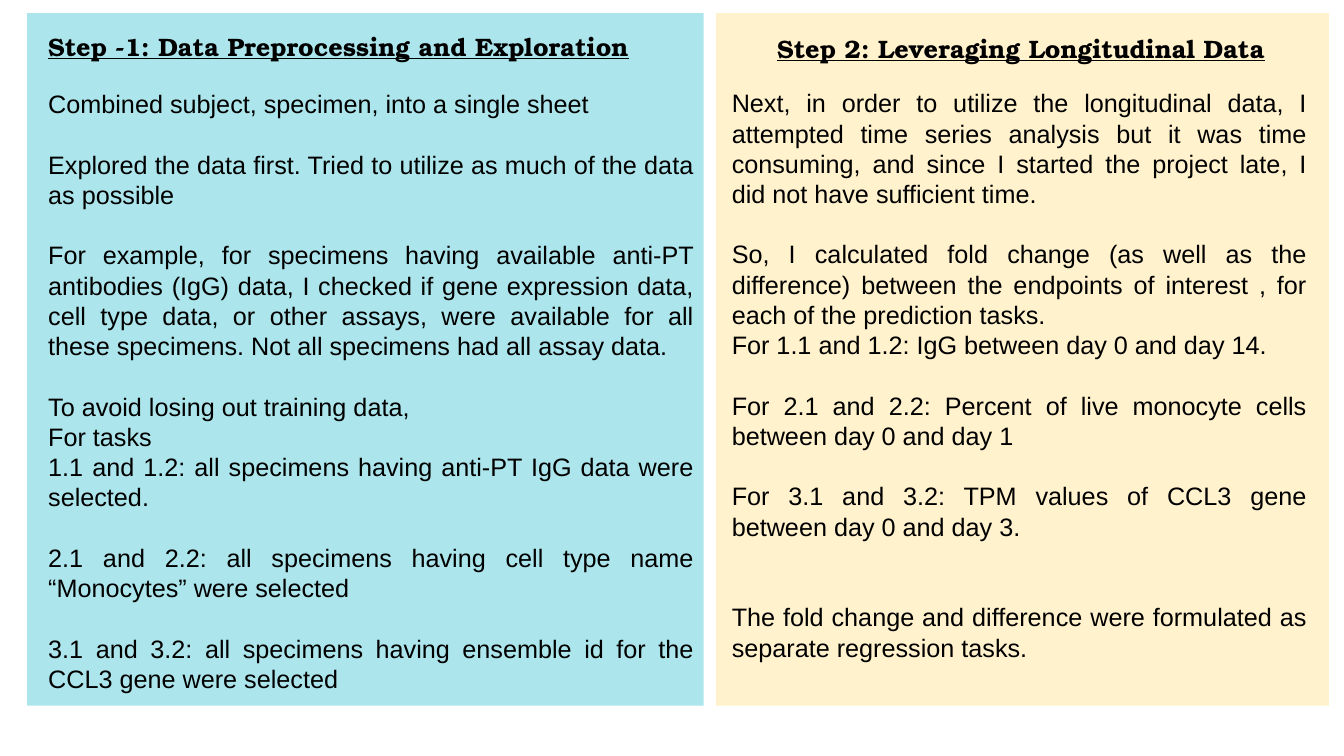
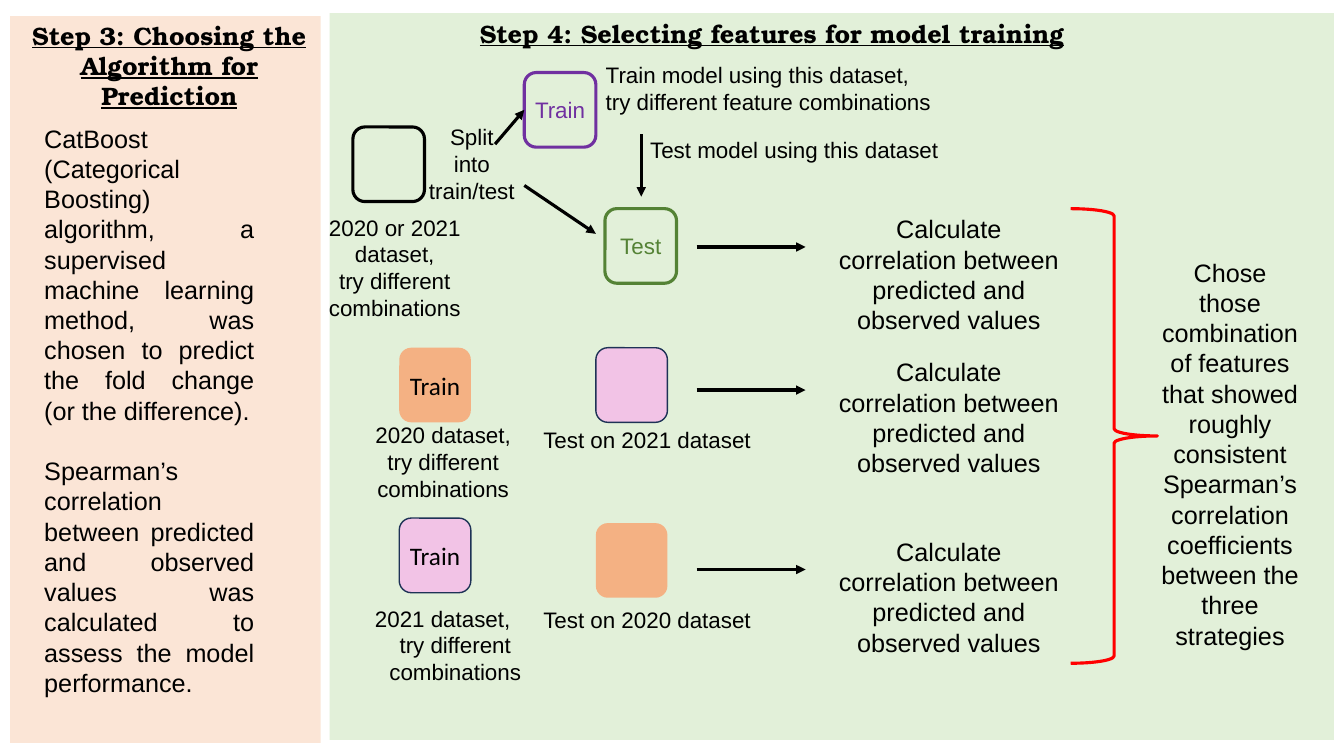
"""Builds two slides on the steps of an immune response prediction project."""
from lxml import etree
from pptx import Presentation
from pptx.dml.color import RGBColor
from pptx.enum.shapes import MSO_CONNECTOR, MSO_SHAPE
from pptx.enum.text import MSO_ANCHOR, MSO_AUTO_SIZE, PP_ALIGN
from pptx.oxml.ns import qn
from pptx.util import Inches, Pt

LEFT, CENTER, JUSTIFY = PP_ALIGN.LEFT, PP_ALIGN.CENTER, PP_ALIGN.JUSTIFY
MIDDLE = MSO_ANCHOR.MIDDLE
GROW = MSO_AUTO_SIZE.SHAPE_TO_FIT_TEXT
RECT, ROUNDED = MSO_SHAPE.RECTANGLE, MSO_SHAPE.ROUNDED_RECTANGLE
BRACE = MSO_SHAPE.RIGHT_BRACE
STRAIGHT = MSO_CONNECTOR.STRAIGHT

COLORS = {
    "text": "000000", "train": "7030A0", "test": "548235", "brace": "FF0000",
    "blue": "ACE6EC", "yellow": "FFF2CC", "peach": "FBE5D6", "green": "E2F0D9",
    "data_2020": "F4B183", "data_2021": "F2C3E6", "outline": "1E3256",
}
BODY_FONT, TITLE_FONT, LABEL_FONT = "Arial", "TeX Gyre Bonum", "Calibri"
BODY_SIZE, NOTE_SIZE = 18, 16
LINE_WIDTH = 2.25
BLANK_LINE = 21.6
BOX_WIDTH, BOX_HEIGHT = 0.71, 0.74

PREPROCESSING = [
    "Combined subject, specimen, into a single sheet",
    "Explored the data first. Tried to utilize as much of the data as possible",
    "For example, for specimens having available anti-PT antibodies (IgG) data, "
    "I checked if gene expression data, cell type data, or other assays, were "
    "available for all these specimens. Not all specimens had all assay data.",
    "To avoid losing out training data,",
    "For tasks",
    "1.1 and 1.2: all specimens having anti-PT IgG data were selected.",
    "2.1 and 2.2: all specimens having cell type name “Monocytes” were selected",
    "3.1 and 3.2: all specimens having ensemble id for the CCL3 gene were selected",
]
LONGITUDINAL = [
    "Next, in order to utilize the longitudinal data, I attempted time series "
    "analysis but it was time consuming, and since I started the project late, "
    "I did not have sufficient time.",
    "So, I calculated fold change (as well as the difference) between the "
    "endpoints of interest , for each of the prediction tasks.",
    "For 1.1 and 1.2: IgG between day 0 and day 14.",
    "For 2.1 and 2.2: Percent of live monocyte cells between day 0 and day 1",
    "For 3.1 and 3.2: TPM values of CCL3 gene between day 0 and day 3.",
    "The fold change and difference were formulated as separate regression tasks.",
]
ALGORITHM = [
    "CatBoost (Categorical Boosting) algorithm, a supervised machine learning "
    "method, was chosen to predict the fold change (or the difference).",
    "Spearman’s correlation between predicted and observed values was "
    "calculated to assess the model performance.",
]
CHOICE = [
    "Chose those", "combination of features", "that showed", "roughly consistent",
    "Spearman’s correlation coefficients between the three strategies",
]
CORRELATION = "Calculate correlation between predicted and observed values"
COMBINATIONS = "try different combinations"


def rgb(name):
    """Return the named palette colour."""
    return RGBColor.from_string(COLORS[name])


def write(frame, paragraphs, size=BODY_SIZE, font=BODY_FONT, color="text",
          align=LEFT, title=False, gaps=()):
    """Fill a frame with paragraphs; gaps maps an index to blank lines above it."""
    gaps = dict(gaps)
    for index, text in enumerate(paragraphs):
        paragraph = frame.add_paragraph() if index else frame.paragraphs[0]
        paragraph.alignment = align
        if index in gaps:
            paragraph.space_before = Pt(BLANK_LINE * gaps[index])
        run = paragraph.add_run()
        run.text = text
        run.font.size = Pt(size)
        run.font.name = TITLE_FONT if title else font
        run.font.color.rgb = rgb(color)
        if title:
            run.font.bold = run.font.underline = True


def add_text(slide, at, *paragraphs, wrap=True, **style):
    """Add a text box that grows with its text."""
    frame = slide.shapes.add_textbox(*map(Inches, at)).text_frame
    frame.word_wrap = wrap
    frame.auto_size = GROW
    write(frame, paragraphs, **style)
    return frame


def add_figure(slide, kind, at, fill=None, line=None, width=LINE_WIDTH):
    """Add a preset shape with an optional fill and outline."""
    figure = slide.shapes.add_shape(kind, *map(Inches, at))
    figure.shadow.inherit = False
    if fill:
        figure.fill.solid()
        figure.fill.fore_color.rgb = rgb(fill)
    else:
        figure.fill.background()
    if line:
        figure.line.color.rgb = rgb(line)
        figure.line.width = Pt(width)
    else:
        figure.line.fill.background()
    return figure


def add_dataset(slide, left, top, label=None, style=None, **look):
    """Add a rounded dataset box with an optional centred label."""
    box = add_figure(slide, ROUNDED, (left, top, BOX_WIDTH, BOX_HEIGHT), **look)
    if label:
        frame = box.text_frame
        frame.margin_left = frame.margin_right = 0
        frame.vertical_anchor = MIDDLE
        frame.word_wrap = False
        write(frame, [label], align=CENTER, **(style or {}))
    return box


def add_arrow(slide, start, end):
    """Add a straight black arrow."""
    arrow = slide.shapes.add_connector(STRAIGHT, *map(Inches, (*start, *end)))
    arrow.line.color.rgb = rgb("text")
    arrow.line.width = Pt(LINE_WIDTH)
    etree.SubElement(arrow.line._get_or_add_ln(), qn("a:tailEnd"), type="triangle")
    etree.SubElement(arrow._element.spPr, qn("a:effectLst"))
    return arrow


def build_data_slide(slide):
    """Draw steps 1 and 2."""
    add_figure(slide, RECT, (7.1, 0.13, 6.08, 6.87), fill="yellow")
    add_figure(slide, RECT, (0.27, 0.13, 6.71, 6.87), fill="blue")
    add_text(slide, (0.38, 0.83, 6.6, 6.16), *PREPROCESSING, align=JUSTIFY,
             gaps={1: 1, 2: 1, 3: 1, 6: 1, 7: 1})
    add_text(slide, (7.16, 0.82, 5.9, 5.86), *LONGITUDINAL, align=JUSTIFY,
             gaps={1: 1, 3: 1, 4: 1, 5: 2})
    add_text(slide, (0.38, 0.26, 6.02, 0.4),
             "Step -1: Data Preprocessing and Exploration", wrap=False, title=True)
    add_text(slide, (7.61, 0.28, 5.09, 0.4),
             "Step 2: Leveraging Longitudinal Data", wrap=False, title=True)


def draw_split_strategy(slide):
    """Draw the strategy that splits one dataset into train and test parts."""
    add_dataset(slide, 3.5, 1.26, line="text")
    train = add_dataset(slide, 5.2, 0.72, "Train", line="train",
                        style={"size": NOTE_SIZE, "color": "train"})
    add_dataset(slide, 6, 2.07, "Test", line="test",
                style={"size": NOTE_SIZE, "color": "test"})
    add_arrow(slide, (4.91, 1.43), (5.2, 1.09)).end_connect(train, 1)
    add_arrow(slide, (5.2, 1.84), (5.91, 2.32))
    add_arrow(slide, (6.36, 1.33), (6.36, 1.95))
    add_text(slide, (5.91, 0.56, 3.47, 0.64), "Train model using this dataset,",
             "try different feature combinations", wrap=False, size=NOTE_SIZE)
    add_text(slide, (6.35, 1.3, 3.09, 0.37), "Test model using this dataset",
             size=NOTE_SIZE)
    add_text(slide, (3.02, 2.07, 1.79, 1.18), "2020 or 2021 dataset,", COMBINATIONS,
             size=NOTE_SIZE, align=CENTER)
    add_text(slide, (4.06, 1.17, 1.24, 0.91), "Split", "into train/test",
             size=NOTE_SIZE, align=CENTER)


def draw_cross_strategies(slide):
    """Draw the strategies that train on one year and test on the other."""
    looks = {
        2020: {"fill": "data_2020"},
        2021: {"fill": "data_2021", "line": "outline", "width": 1},
    }
    rows = [
        (2020, 2021, 3.45, 3.45, (3.5, 4.13), 4.18, CENTER),
        (2021, 2020, 5.14, 5.19, (3.62, 5.95), 5.96, LEFT),
    ]
    for train, test, train_top, test_top, note_at, test_note_top, align in rows:
        add_dataset(slide, 3.96, train_top, "Train", style={"font": LABEL_FONT},
                    **looks[train])
        add_dataset(slide, 5.91, test_top, **looks[test])
        note = add_text(slide, (*note_at, 1.79, 0.91), f"{train} dataset,",
                        COMBINATIONS, size=NOTE_SIZE, align=CENTER)
        note.paragraphs[0].alignment = align
        add_text(slide, (5.29, test_note_top, 2.29, 0.37), f"Test on {test} dataset",
                 wrap=False, size=NOTE_SIZE)


def build_model_slide(slide):
    """Draw steps 3 and 4."""
    add_figure(slide, RECT, (3.27, 0.13, 9.96, 7.21), fill="green")
    add_figure(slide, RECT, (0.1, 0.16, 3.08, 7.21), fill="peach")
    add_text(slide, (0.1, 0.15, 3.16, 1.01),
             "Step 3: Choosing the Algorithm for Prediction", title=True, align=CENTER)
    add_text(slide, (4.66, 0.13, 7.38, 0.4),
             "Step 4: Selecting features for model training", title=True)
    add_text(slide, (0.34, 1.17, 2.28, 5.86), *ALGORITHM, align=JUSTIFY, gaps={1: 1})
    draw_split_strategy(slide)
    draw_cross_strategies(slide)
    for middle in (2.45, 3.87, 5.65):
        add_arrow(slide, (6.91, middle), (7.99, middle))
        add_text(slide, (8.2, middle - 0.38, 2.42, 1.31), CORRELATION, align=CENTER)
    add_figure(slide, BRACE, (10.62, 2.07, 0.86, 4.51), line="brace")
    add_text(slide, (11.4, 2.5, 1.6, 4.04), *CHOICE, align=CENTER)


def main():
    """Build and save the presentation."""
    deck = Presentation()
    deck.slide_width, deck.slide_height = Inches(13.33), Inches(7.5)
    for build in (build_data_slide, build_model_slide):
        build(deck.slides.add_slide(deck.slide_layouts[6]))
    deck.save("out.pptx")


if __name__ == "__main__":
    main()
